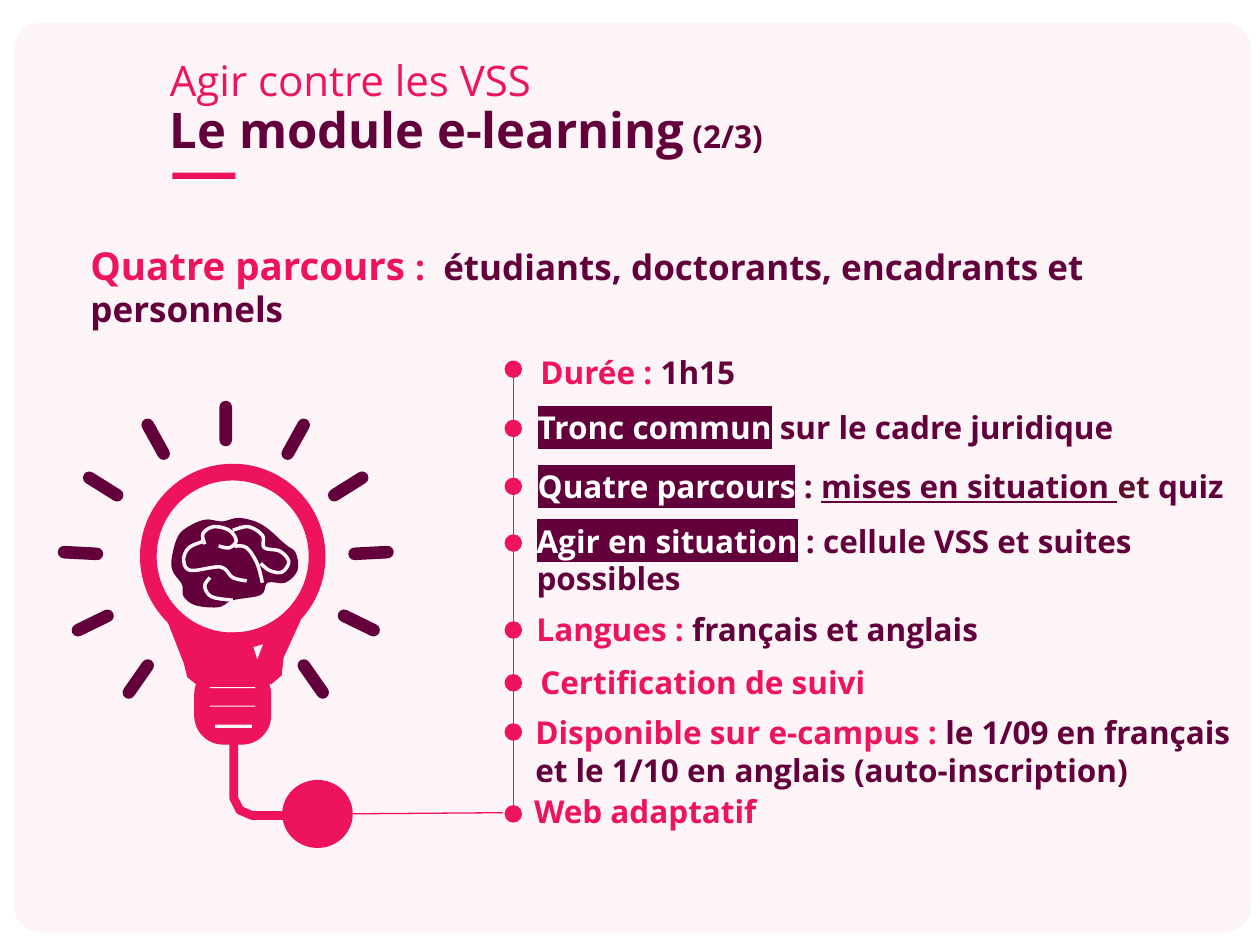
"""Build the slide on the e-learning module against VSS."""
from lxml.etree import SubElement
from pptx import Presentation
from pptx.dml.color import RGBColor
from pptx.enum.shapes import MSO_CONNECTOR, MSO_SHAPE as Shape
from pptx.oxml import parse_xml
from pptx.oxml.ns import nsdecls, qn
from pptx.util import Pt

PINK = RGBColor(0xED, 0x14, 0x5B)
PLUM = RGBColor(0x63, 0x00, 0x3C)
WINE = RGBColor(0x60, 0x0F, 0x2D)
WHITE = RGBColor(0xFF, 0xFF, 0xFF)
BLUSH = RGBColor(0xF7, 0xD4, 0xDC)
PALE = RGBColor(0xFD, 0xF4, 0xF6)
FONT = "Open Sans"

TITLE = [
    [("Agir contre les VSS", 24, PINK, "")],
    [("Le module e-learning", 28, PLUM, "b"), (" (2/3)", 18, PLUM, "b")],
]
INTRO = [[
    ("Quatre parcours ", 22, PINK, "b"),
    (":\u00a0 ", 20, PINK, "b"),
    ("étudiants, doctorants, encadrants et personnels", 20, PLUM, "b"),
]]
ITEMS = [
    (211, (301.7, 198, 266), [("Durée : ", PINK, "b"), ("1h15", PLUM, "b")]),
    (244.8, (300.2, 229.7, 356),
     [("Tronc commun", WHITE, "bh"), (" sur le cadre juridique", PLUM, "b")]),
    (277.9, (300.2, 263.5, 419),
     [("Quatre parcours", WHITE, "bh"), (" : ", PLUM, "b"),
      ("mises en situation ", PLUM, "bu"), ("et ", WINE, "b"), ("quiz", PLUM, "b")]),
    (310.3, (299.5, 294.5, 358),
     [("Agir en situation", WHITE, "bh"), (" : cellule VSS et suites possibles", PLUM, "b")]),
    (360, (299.5, 344.9, 346),
     [("Langues : ", PINK, "b"), ("français et anglais", PLUM, "b")]),
    (390.2, (301.7, 375.1, 307), [("Certification de suivi", PINK, "b")]),
    (418.3, (298.8, 403.9, 416),
     [("Disponible sur e-campus : ", PINK, "b"),
      ("le 1/09 en français et le 1/10 en anglais (auto-inscription)", PLUM, "b")]),
    (465.1, (298.1, 449.3, 307), [("Web adaptatif", PINK, "b")]),
]
TIMELINE_X, BULLET_SIZE, ITEM_HEIGHT = 293.3, 10, 28.8

RAY_AXIS, RAY_STEP, RAY_LENGTH, RAY_WIDTH = 129, 29, 26, 7.2
RAYS = [(0, 242), (40, 251), (70, 278), (83, 316), (76, 356), (50, 388)]

NECK = [(96, 356), (105, 379), (107, 387), (112, 391), (155, 391), (161, 386),
        (162, 376), (172, 354), (155, 356), (147, 377), (142, 361), (120, 362)]
CORD = [(133.5, 424), (133.5, 456), (137, 463), (144, 466), (165, 466)]
SLOTS = [(120, 392.7, 26, 0.6), (120, 403.2, 26, 0.6), (123, 414, 21, 2)]
BRAIN = [(98, 320), (101, 308), (106, 302), (117, 297), (127, 298), (137, 296),
         (150, 300), (163, 311), (169, 316), (170, 326), (163, 333), (153, 333),
         (149, 340), (133, 343), (125, 347), (112, 346), (105, 341), (104, 334), (99, 327)]
FOLDS = [
    [(117, 309), (108, 313), (105, 320), (109, 326), (126, 324), (133, 330), (141, 332)],
    [(117, 311), (116, 305), (122, 301), (131, 303), (135, 309), (131, 313), (125, 312)],
    [(133, 303), (142, 301), (150, 306), (151, 313), (160, 315), (165, 321),
     (161, 327), (154, 326), (149, 322)],
    [(134, 312), (141, 313), (147, 322), (150, 333)],
    [(120, 330), (117, 335), (121, 341), (133, 343)],
]
CURVE_STEPS = 5


def paint(shape, color):
    shape.shadow.inherit = False
    shape.fill.solid()
    shape.fill.fore_color.rgb = color
    shape.line.fill.background()
    return shape


def add_preset(slide, kind, box, color):
    return paint(slide.shapes.add_shape(kind, *map(Pt, box)), color)


def smooth(points, closed=False):
    ring = [points[-1], *points, *points[:2]] if closed else [points[0], *points, points[-1]]
    curve = []
    for a, b, c, d in zip(ring, ring[1:], ring[2:], ring[3:]):
        for index in range(CURVE_STEPS):
            t = index / CURVE_STEPS
            curve.append(tuple(
                q + t * (r - p + t * (2 * p - 5 * q + 4 * r - s
                                      + t * (3 * q - p - 3 * r + s))) / 2
                for p, q, r, s in zip(a, b, c, d)))
    return curve if closed else [*curve, points[-1]]


def add_outline(slide, points, closed=True):
    first, *others = [(Pt(x), Pt(y)) for x, y in points]
    builder = slide.shapes.build_freeform(*first)
    builder.add_line_segments(others, close=closed)
    return builder.convert_to_shape()


def add_stroke(slide, points, color, width):
    shape = add_outline(slide, points, closed=False)
    shape.shadow.inherit = False
    shape.fill.background()
    shape.line.color.rgb = color
    shape.line.width = Pt(width)


def add_line(slide, *ends):
    line = slide.shapes.add_connector(MSO_CONNECTOR.STRAIGHT, *map(Pt, ends))
    line.line.color.rgb = PINK
    line.line.width = Pt(0.75)
    SubElement(line._element.spPr, qn("a:effectLst"))


def add_text(slide, box, paragraphs, spacing=None):
    frame = slide.shapes.add_textbox(*map(Pt, box)).text_frame
    frame.word_wrap = True
    for index, runs in enumerate(paragraphs):
        paragraph = frame.add_paragraph() if index else frame.paragraphs[0]
        paragraph.line_spacing = spacing
        for text, size, color, style in runs:
            run = paragraph.add_run()
            run.text = text
            run.font.name, run.font.size = FONT, Pt(size)
            run.font.color.rgb = color
            run.font.bold = "b" in style
            run.font.underline = "u" in style
            if "h" in style:
                run._r.rPr.find(qn("a:solidFill")).addnext(parse_xml(
                    f'<a:highlight {nsdecls("a")}><a:srgbClr val="{PLUM}"/></a:highlight>'))


def add_panel(slide):
    panel = add_preset(slide, Shape.ROUNDED_RECTANGLE, (8, 13, 707, 520), BLUSH)
    panel.adjustments[0] = 0.03
    color = panel._element.spPr.find(qn("a:solidFill")).find(qn("a:srgbClr"))
    SubElement(color, qn("a:alpha"), val="25000")


def add_bulb(slide):
    add_stroke(slide, CORD, PINK, 5)
    glass = add_preset(slide, Shape.DONUT, (80, 265, 106, 106), PINK)
    glass.adjustments[0] = 0.09
    paint(add_outline(slide, NECK), PINK)
    socket = add_preset(slide, Shape.ROUNDED_RECTANGLE, (111, 380, 44, 45.5), PINK)
    socket.adjustments[0] = 0.38
    for slot in SLOTS:
        add_preset(slide, Shape.RECTANGLE, slot, PALE)
    paint(add_outline(slide, smooth(BRAIN, closed=True)), PLUM)
    for fold in FOLDS:
        add_stroke(slide, smooth(fold), PALE, 2)
    add_preset(slide, Shape.OVAL, (161.3, 445.7, 40.3, 38.9), PINK)


def add_rays(slide):
    for index, (offset, y) in enumerate(RAYS):
        for side in (1, -1) if offset else (1,):
            box = (RAY_AXIS + side * offset - RAY_WIDTH / 2, y - RAY_LENGTH / 2,
                   RAY_WIDTH, RAY_LENGTH)
            ray = add_preset(slide, Shape.ROUNDED_RECTANGLE, box, PLUM)
            ray.adjustments[0] = 0.5
            ray.rotation = side * index * RAY_STEP


def add_timeline(slide):
    add_line(slide, 194.4, 465.1, 287.3, 464.4)
    add_line(slide, TIMELINE_X, ITEMS[0][0], TIMELINE_X, ITEMS[-1][0])
    for y, place, runs in ITEMS:
        corner = (TIMELINE_X - BULLET_SIZE / 2, y - BULLET_SIZE / 2)
        add_preset(slide, Shape.OVAL, (*corner, BULLET_SIZE, BULLET_SIZE), PINK)
        add_text(slide, (*place, ITEM_HEIGHT),
                 [[(text, 18, color, style) for text, color, style in runs]])


def main():
    presentation = Presentation()
    presentation.slide_width, presentation.slide_height = Pt(720), Pt(540)
    slide = presentation.slides.add_slide(presentation.slide_layouts[6])
    add_panel(slide)
    add_text(slide, (90, 31, 630, 34.6), TITLE, 0.9)
    add_preset(slide, Shape.RECTANGLE, (98.6, 98.6, 36, 3.6), PINK)
    add_text(slide, (44.6, 134.6, 655.2, 58.3), INTRO)
    add_bulb(slide)
    add_rays(slide)
    add_timeline(slide)
    presentation.save("out.pptx")


if __name__ == "__main__":
    main()
